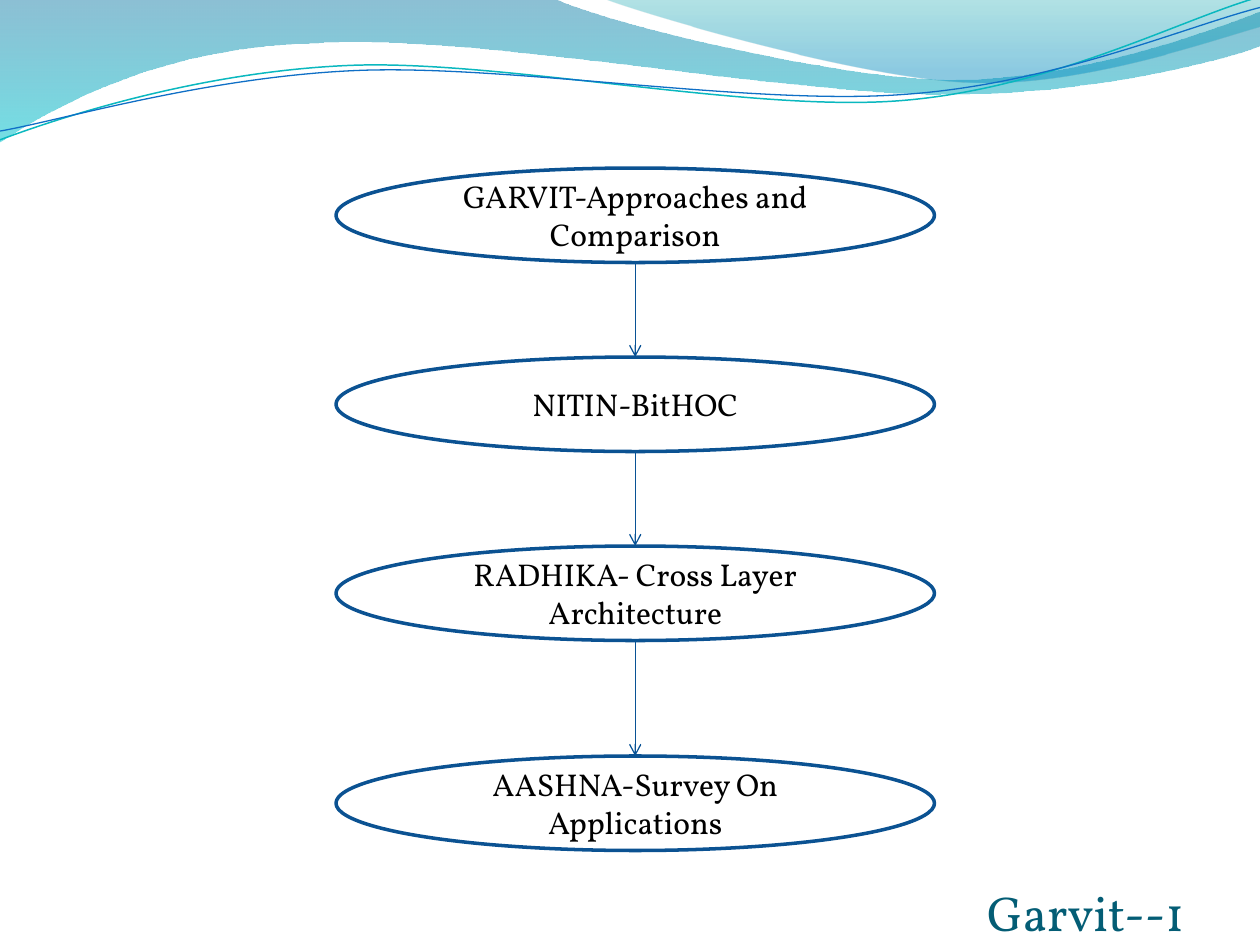
from math import cos, radians, sin

from pptx import Presentation
from pptx.dml.color import RGBColor
from pptx.enum.shapes import MSO_CONNECTOR as Connector, MSO_SHAPE as Shape
from pptx.enum.text import MSO_ANCHOR as Anchor, PP_ALIGN as Align
from pptx.oxml.ns import qn
from pptx.util import Pt
from lxml.etree import SubElement

FONT = "Vollkorn"
STRAND_TILT = 357.3

BACK_WAVE = [
    [(0, 0)],
    [(316.8, -0.7)],
    [(342.7, 12.2), (478.1, 45.4), (545.8, 45.4)],
    [(614.2, 45.4), (689.8, 18.7), (720, 6.5)],
    [(720.7, 25.9)],
    [(707.8, 31.7), (626.4, 54.7), (537.1, 54)],
    [(447.8, 54), (275, 20.2), (185, 24.5)],
    [(92.9, 25.9), (33.1, 59.8), (-0.7, 81.4)],
    [(0, 0)],
]
FRONT_WAVE = [
    [(344.9, -0.7)],
    [(366.5, 7.9), (491, 44.6), (553.7, 46.8)],
    [(616.3, 49.7), (691.9, 23), (720, 15.1)],
    [(720, 0)],
    [(344.9, -0.7)],
]
TEAL_STRAND = [
    [(0, 79.9)],
    [(34.6, 67), (113.8, 41), (199.4, 37.4)],
    [(284.4, 33.8), (427, 64.1), (513.4, 57.6)],
    [(599.8, 51.1), (675.4, 10.8), (718.6, -1.4)],
]
BLUE_STRAND = [
    [(0, 74.9)],
    [(33.8, 69.1), (118.1, 43.9), (203.8, 40.3)],
    [(290.2, 36.7), (429.8, 60.5), (516.2, 54)],
    [(601.9, 48.2), (677.5, 15.1), (720, 4.3)],
]
SPEAKERS = [
    ("GARVIT-Approaches and Comparison", 0),
    ("NITIN-BitHOC", 108),
    ("RADHIKA- Cross Layer Architecture", 216),
    ("AASHNA-Survey On Applications", 336),
]


def rgb(code):
    return RGBColor.from_string(code)


def style_text(paragraph, size, color):
    for run in paragraph.runs:
        run.font.name = FONT
        run.font.size = Pt(size)
        run.font.color.rgb = rgb(color)


def level(point, center):
    angle = radians(-STRAND_TILT)
    dx, dy = point[0] - center[0], point[1] - center[1]
    return (
        center[0] + dx * cos(angle) - dy * sin(angle),
        center[1] + dx * sin(angle) + dy * cos(angle),
    )


def add_outline(slide, left, top, segments, closed):
    corners = [(Pt(left + x), Pt(top + y)) for segment in segments for x, y in segment]
    builder = slide.shapes.build_freeform(*corners[0], scale=1.0)
    builder.add_line_segments(corners[1:], close=closed)
    outline = builder.convert_to_shape()
    outline.shadow.inherit = False
    steps = iter(list(outline._element.spPr.iter(qn("a:lnTo"))))
    for segment in segments[1:]:
        first, *others = [next(steps) for _ in segment]
        if others:
            curve = first.makeelement(qn("a:cubicBezTo"))
            first.addprevious(curve)
            for step in (first, *others):
                curve.append(step[0])
                step.getparent().remove(step)
    return outline


def add_wave(slide, left, top, segments, stops):
    wave = add_outline(slide, left, top, segments, True)
    wave.line.fill.background()
    wave.fill.gradient()
    wave.fill.gradient_angle = 270
    for stop, (position, color, opacity) in zip(wave.fill.gradient_stops, stops):
        stop.position = position
        stop.color.rgb = rgb(color)
    tints = wave._element.spPr.iter(qn("a:srgbClr"))
    for tint, (position, color, opacity) in zip(list(tints), stops):
        SubElement(tint, qn("a:alpha")).set("val", str(opacity * 1000))


def add_strand(slide, left, top, segments, center, color, width):
    flat = [[level(point, center) for point in segment] for segment in segments]
    strand = add_outline(slide, left, top, flat, False)
    strand.rotation = STRAND_TILT
    strand.fill.background()
    strand.line.color.rgb = rgb(color)
    strand.line.width = Pt(width)


def add_banner(slide, left, top):
    add_wave(slide, left, top, BACK_WAVE, [(0, "0074A1", 45), (1, "00C6CF", 55)])
    add_wave(slide, left, top, FRONT_WAVE, [(0, "00A1A9", 30), (0.8, "008BBF", 45)])
    add_strand(slide, left, top, TEAL_STRAND, (359.3, 41.4), "0AB8BF", 0.85)
    add_strand(slide, left, top, BLUE_STRAND, (359.7, 42.5), "0F6FC6", 0.75)


def add_topic(slide, left, top, width, height, label):
    topic = slide.shapes.add_shape(Shape.OVAL, Pt(left), Pt(top), Pt(width), Pt(height))
    topic.shadow.inherit = False
    topic.fill.background()
    topic.line.color.rgb = rgb("0B5292")
    topic.line.width = Pt(2)
    frame = topic.text_frame
    frame.text = label
    frame.word_wrap = True
    frame.vertical_anchor = Anchor.MIDDLE
    frame.paragraphs[0].alignment = Align.CENTER
    style_text(frame.paragraphs[0], 18, "000000")


def add_arrow(slide, x, start, end):
    arrow = slide.shapes.add_connector(Connector.STRAIGHT, Pt(x), Pt(start), Pt(x), Pt(end))
    arrow.line.color.rgb = rgb("095295")
    arrow.line.width = Pt(0.75)
    SubElement(arrow.line._get_or_add_ln(), qn("a:tailEnd")).set("type", "arrow")
    SubElement(arrow._element.spPr, qn("a:effectLst"))


def add_speaker_flow(slide, left, top, width, topic_height):
    for label, offset in SPEAKERS:
        add_topic(slide, left, top + offset, width, topic_height, label)
    for (_, offset), (_, next_offset) in zip(SPEAKERS, SPEAKERS[1:]):
        add_arrow(slide, left + width / 2, top + offset + topic_height, top + next_offset)


def add_footer(slide, left, top, width, height):
    footer = slide.shapes.add_textbox(Pt(left), Pt(top), Pt(width), Pt(height))
    frame = footer.text_frame
    frame.text = "Garvit--1"
    frame.word_wrap = True
    frame.vertical_anchor = Anchor.BOTTOM
    frame.margin_left = frame.margin_right = frame.margin_top = frame.margin_bottom = 0
    style_text(frame.paragraphs[0], 28, "045D75")


def main():
    deck = Presentation()
    deck.slide_width, deck.slide_height = Pt(720), Pt(540)
    slide = deck.slides.add_slide(deck.slide_layouts[6])
    add_banner(slide, 0, 0)
    add_speaker_flow(slide, 192, 96, 342, 54)
    add_footer(slide, 564, 504, 132, 34)
    deck.save("out.pptx")


if __name__ == "__main__":
    main()
